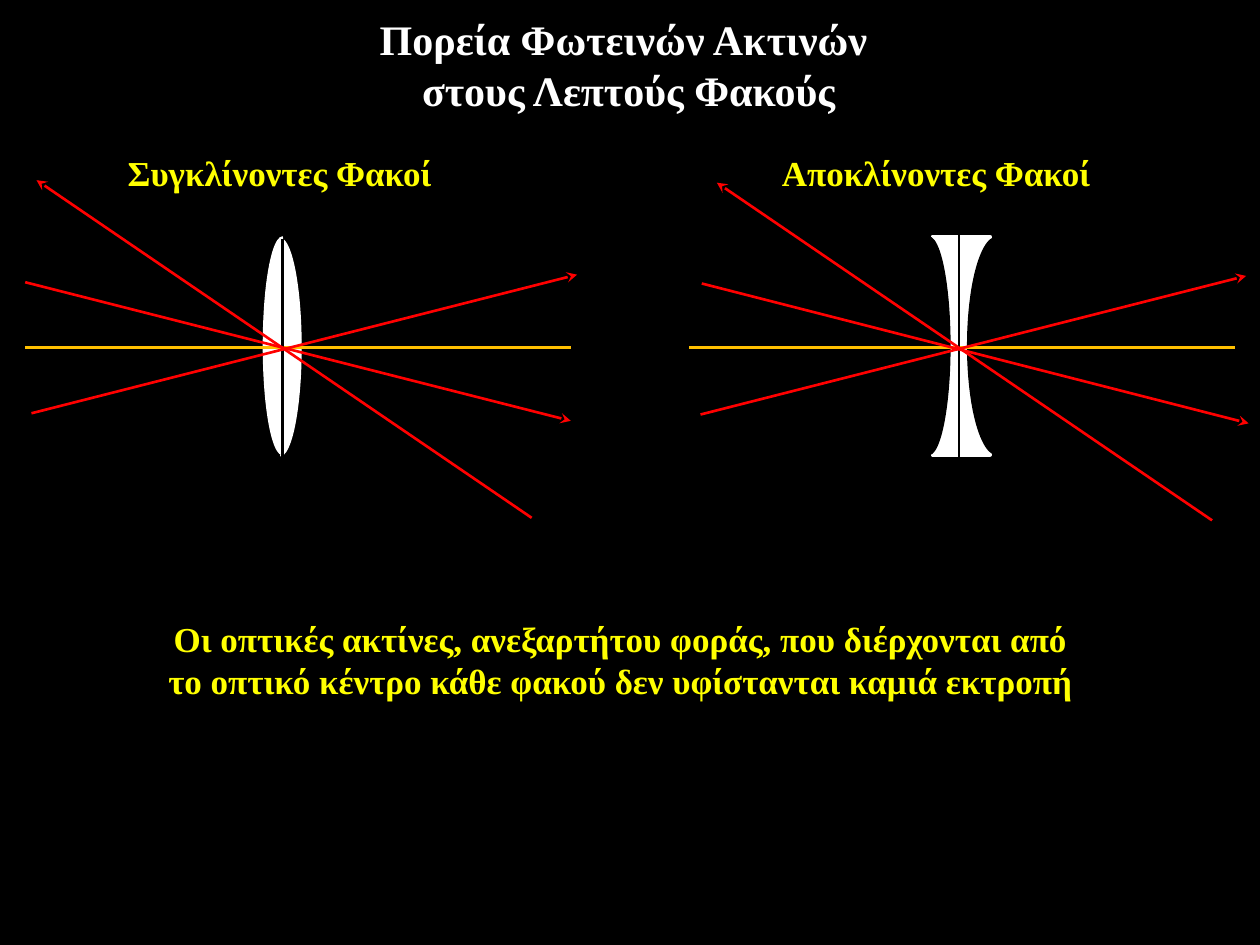
"""Builds a slide on light rays through the optical centre of thin lenses."""
import pptx
import pptx.dml.color
import pptx.enum.shapes
import pptx.enum.text
import pptx.oxml
import pptx.oxml.ns
import pptx.util
from pptx.util import Inches

SHAPES = pptx.enum.shapes.MSO_SHAPE
ANCHOR = pptx.enum.text.MSO_ANCHOR
WHITE, BLACK, YELLOW, AMBER, RED = "FFFFFF", "000000", "FFFF00", "FFC000", "FF0000"

deck = pptx.Presentation()
deck.slide_width, deck.slide_height = Inches(10), Inches(7.5)
page = deck.slides.add_slide(deck.slide_layouts[6])


def paint(target, color):
    if hasattr(target, "solid"):
        target.solid()
        target.fore_color.rgb = pptx.dml.color.RGBColor.from_string(color)
    else:
        target.rgb = pptx.dml.color.RGBColor.from_string(color)


def add_text(text, left, top, width, height, size=20, color=YELLOW, anchor=ANCHOR.TOP):
    box = page.shapes.add_textbox(Inches(left), Inches(top), Inches(width), Inches(height))
    frame = box.text_frame
    frame.word_wrap = True
    frame.vertical_anchor = anchor
    frame.text = text
    for para in frame.paragraphs:
        para.alignment = pptx.enum.text.PP_ALIGN.CENTER
        for span in para.runs:
            span.font.name = "Times New Roman"
            span.font.size = pptx.util.Pt(size)
            span.font.bold = True
            paint(span.font.color, color)


paint(page.background.fill, BLACK)

add_text("Πορεία Φωτεινών Ακτινών \nστους Λεπτούς Φακούς", -0.01, 0.02, 10, 0.98,
         size=24, color=WHITE, anchor=ANCHOR.MIDDLE)
add_text("Συγκλίνοντες Φακοί", 0.83, 1.15, 2.78, 0.44)
add_text("Αποκλίνοντες Φακοί", 6.04, 1.15, 2.78, 0.44)
add_text("Οι οπτικές ακτίνες, ανεξαρτήτου φοράς, που διέρχονται από "
         "το οπτικό κέντρο κάθε φακού δεν υφίστανται καμιά εκτροπή", 1.15, 4.85, 7.55, 0.77)

lens_parts = [
    (SHAPES.ARC, 2.05, 1.89, 0.34, WHITE, 0.75, False),
    (SHAPES.ARC, 2.09, 1.88, 0.31, WHITE, 0.75, True),
    (SHAPES.RECTANGLE, 7.4, 1.88, 0.46, WHITE, 2, False),
    (SHAPES.ARC, 7.2, 1.88, 0.34, BLACK, 0.75, False),
    (SHAPES.ARC, 7.68, 1.88, 0.47, BLACK, 0.75, True),
]
for kind, left, top, width, color, weight, mirrored in lens_parts:
    part = page.shapes.add_shape(kind, Inches(left), Inches(top), Inches(width), Inches(1.73))
    part.shadow.inherit = False
    paint(part.fill, color)
    paint(part.line.fill, color)
    part.line.width = pptx.util.Pt(weight)
    if kind == SHAPES.ARC:
        part.adjustments[0] = 162
        part.adjustments[1] = 53.74
    if mirrored:
        part.element.spPr.find(pptx.oxml.ns.qn("a:xfrm")).set("flipH", "1")

lines = [
    (0.2, 2.76, 4.53, 2.76, AMBER),
    (5.47, 2.76, 9.8, 2.76, AMBER),
    (2.24, 1.9, 2.24, 3.63, BLACK),
    (7.61, 1.86, 7.61, 3.63, BLACK),
    (0.2, 2.24, 4.53, 3.34, RED),
    (5.57, 2.25, 9.91, 3.36, RED),
    (5.56, 3.29, 9.89, 2.19, RED),
    (0.25, 3.28, 4.58, 2.18, RED),
    (4.22, 4.11, 0.29, 1.43, RED),
    (9.62, 4.13, 5.69, 1.45, RED),
]
for start_x, start_y, end_x, end_y, color in lines:
    line = page.shapes.add_connector(
        pptx.enum.shapes.MSO_CONNECTOR.STRAIGHT,
        Inches(start_x), Inches(start_y), Inches(end_x), Inches(end_y))
    paint(line.line.fill, color)
    line.line.width = pptx.util.Pt(1.5)
    if color == RED:
        arrowhead = pptx.oxml.parse_xml(
            f'<a:tailEnd {pptx.oxml.ns.nsdecls("a")} type="stealth"/>')
        line.line.fill
        line.element.spPr.find(pptx.oxml.ns.qn("a:ln")).append(arrowhead)
    line.element.spPr.append(
        pptx.oxml.parse_xml(f'<a:effectLst {pptx.oxml.ns.nsdecls("a")}/>'))

deck.save("out.pptx")
